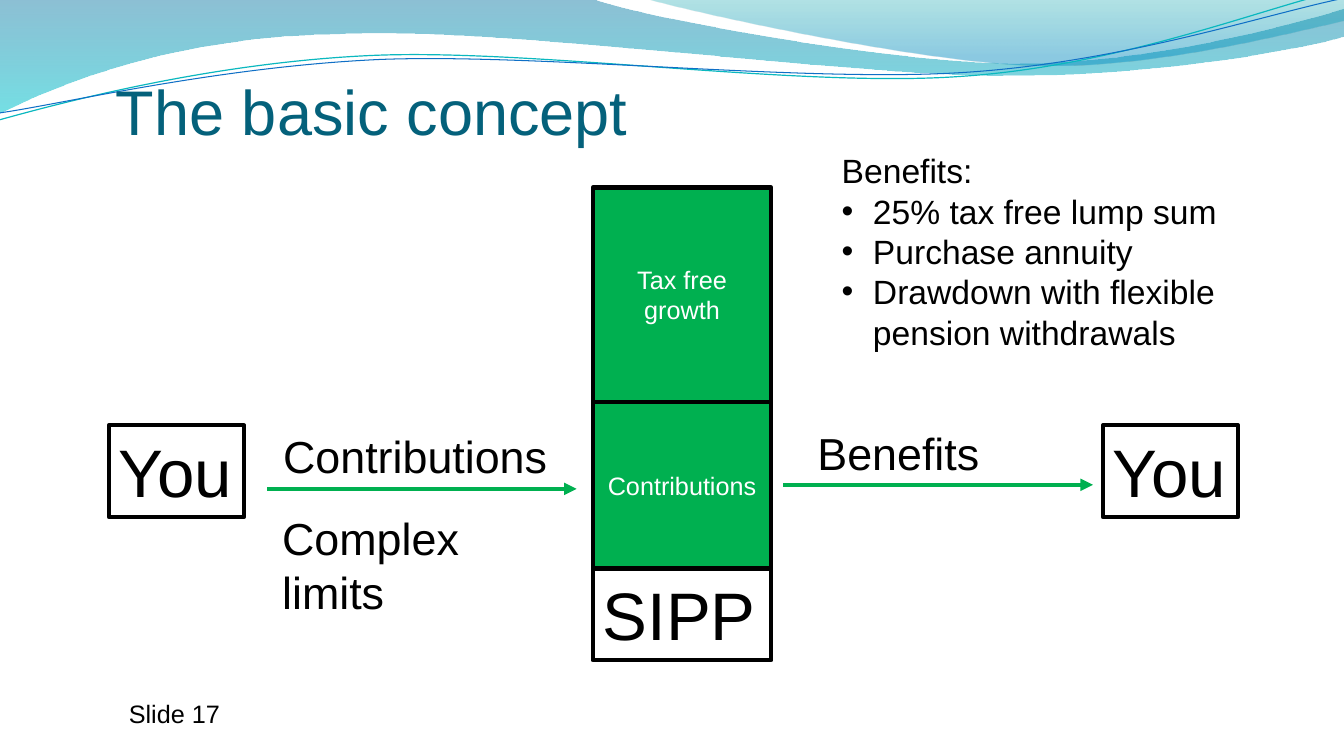
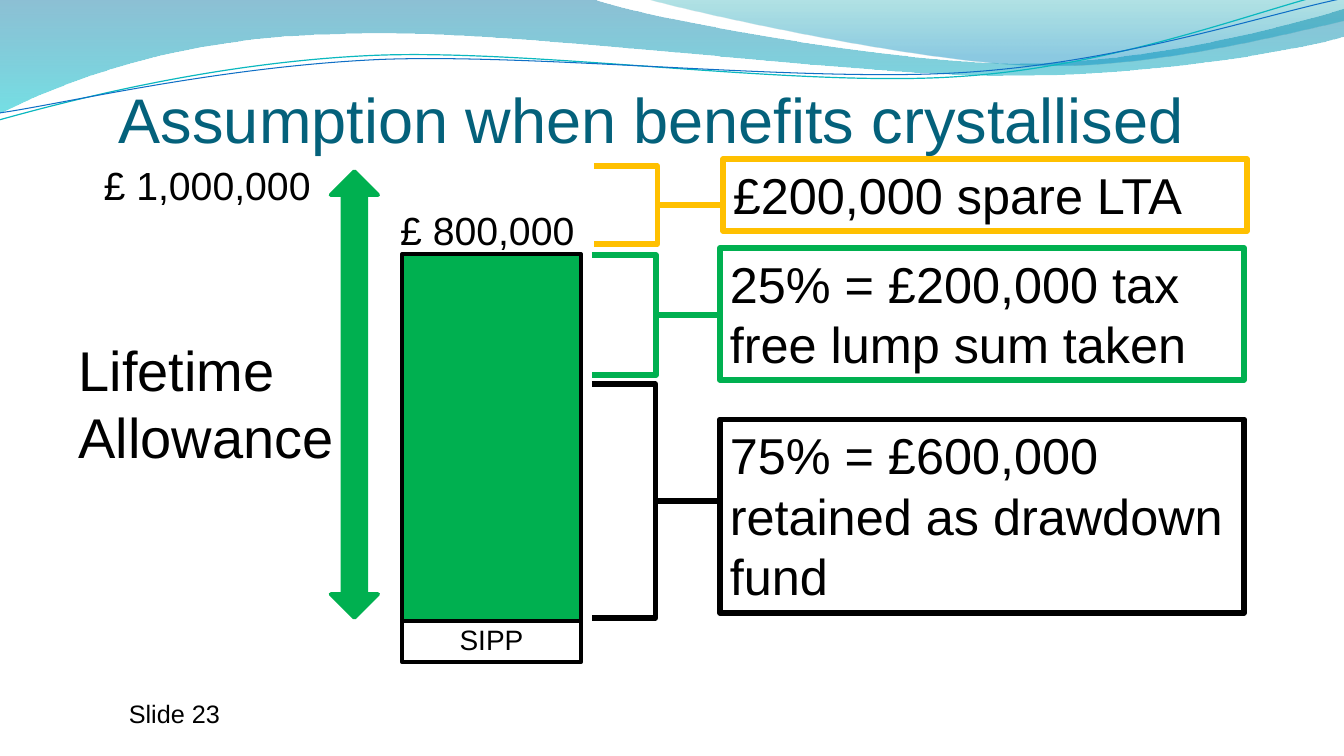
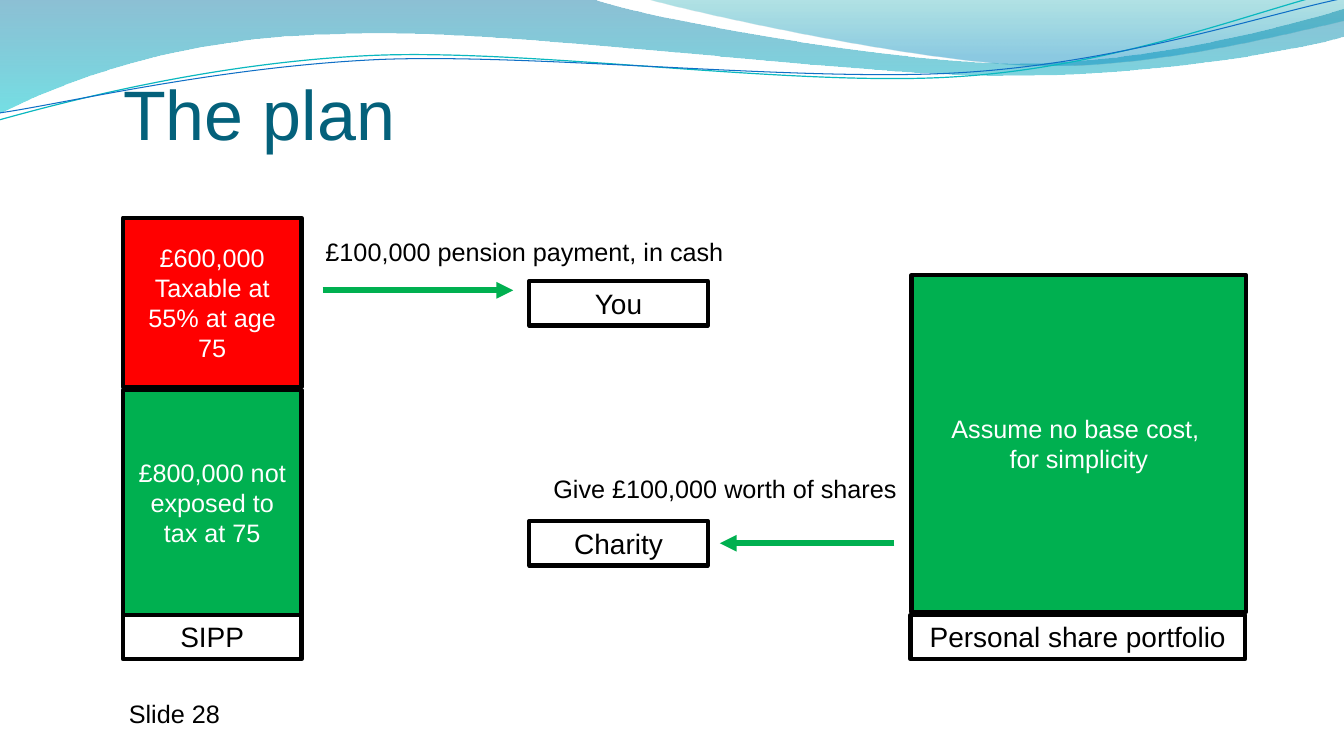
from lxml.etree import SubElement
from pptx import Presentation
from pptx.dml.color import RGBColor
from pptx.enum.shapes import MSO_CONNECTOR, MSO_SHAPE
from pptx.enum.text import MSO_ANCHOR, MSO_AUTO_SIZE, PP_ALIGN
from pptx.oxml.ns import qn
from pptx.util import Inches, Pt

FONT = "Arial"
BLACK, WHITE = "000000", "FFFFFF"
GREEN, RED, AMBER = "00B050", "FF0000", "FFC000"
TITLE_BLUE = "04617B"
BAR_WIDTH = 1.77
LABEL_HEIGHT = 0.44

BROAD_WAVE = [
    (0, 0), (5.87, -0.01), (6.34, 0.17, 8.85, 0.63, 10.11, 0.63),
    (11.38, 0.63, 12.78, 0.26, 13.33, 0.09), (13.35, 0.36),
    (13.11, 0.44, 11.6, 0.76, 9.94, 0.75), (8.29, 0.75, 5.09, 0.28, 3.43, 0.34),
    (1.72, 0.36, 0.61, 0.83, -0.01, 1.13), (0, 0),
]
RIGHT_WAVE = [
    (6.39, -0.01), (6.79, 0.11, 9.09, 0.62, 10.25, 0.65),
    (11.41, 0.69, 12.82, 0.32, 13.33, 0.21), (13.33, 0), (6.39, -0.01),
]
TEAL_STRAND = [
    (-0.01, 1.19), (0.64, 1.01, 2.11, 0.62, 3.69, 0.55),
    (5.27, 0.48, 7.9, 0.87, 9.5, 0.76), (11.1, 0.66, 12.52, 0.08, 13.31, -0.1),
]
BLUE_STRAND = [
    (0, 1.12), (0.63, 1.03, 2.18, 0.66, 3.78, 0.59),
    (5.37, 0.53, 7.96, 0.82, 9.55, 0.72), (11.15, 0.62, 12.55, 0.14, 13.34, -0.02),
]


def rgb(code):
    """Turn a hex string into a colour."""
    return RGBColor.from_string(code)


def inches(*lengths):
    """Convert several lengths to Inches."""
    return [Inches(length) for length in lengths]


def bend(outline, segments):
    """Turn each three-point run of an outline into a cubic curve."""
    steps = outline.element.iter(qn("a:lnTo"))
    steps = iter(list(steps))
    for segment in segments:
        first = next(steps)
        if len(segment) == 6:
            first.tag = qn("a:cubicBezTo")
            for _ in range(2):
                control = next(steps)
                first.append(control[0])
                control.getparent().remove(control)


def draw_outline(slide, segments, close):
    """Draw an outline of lines and cubic curves and return it."""
    points = [tuple(inches(*segment[at:at + 2]))
              for segment in segments for at in range(0, len(segment), 2)]
    builder = slide.shapes.build_freeform(*points[0])
    builder.add_line_segments(points[1:], close=close)
    outline = builder.convert_to_shape()
    bend(outline, segments[1:])
    outline.shadow.inherit = False
    return outline


def add_wave(slide, segments, stops):
    """Draw a wave with a translucent downward gradient."""
    wave = draw_outline(slide, segments, True)
    wave.line.fill.background()
    wave.fill.gradient()
    wave.fill.gradient_angle = 270
    for stop, (position, color, _) in zip(wave.fill.gradient_stops, stops):
        stop.position = position
        stop.color.rgb = rgb(color)
    for node, (_, _, opacity) in zip(wave.element.iter(qn("a:srgbClr")), stops):
        SubElement(node, qn("a:alpha"), val=str(opacity * 1000))
    return wave


def add_strand(slide, segments, color, width):
    """Draw a thin curved line."""
    strand = draw_outline(slide, segments, False)
    strand.fill.background()
    strand.line.color.rgb = rgb(color)
    strand.line.width = Pt(width)
    return strand


def decorate_layout(slide):
    """Build the waves once and place them on the shared layout."""
    waves = [
        add_wave(slide, BROAD_WAVE, [(0, "0074A1", 45), (1, "00C6CF", 55)]),
        add_wave(slide, RIGHT_WAVE, [(0, "00A1A9", 30), (0.8, "008BBF", 45)]),
        add_strand(slide, TEAL_STRAND, "0AB8BF", 0.85),
        add_strand(slide, BLUE_STRAND, "0F6FC6", 0.75),
    ]
    for wave in waves:
        slide.slide_layout.shapes.element.append(wave.element)


def write(frame, lines, size, color=BLACK, align=PP_ALIGN.LEFT, anchor=MSO_ANCHOR.TOP):
    """Fill a text frame with one paragraph per line."""
    frame.word_wrap = True
    frame.vertical_anchor = anchor
    for index, line in enumerate(lines):
        paragraph = frame.add_paragraph() if index else frame.paragraphs[0]
        paragraph.alignment = align
        run = paragraph.add_run()
        run.text = line
        run.font.name = FONT
        run.font.size = Pt(size)
        run.font.color.rgb = rgb(color)


def add_text(slide, box, lines, size):
    """Add plain black text."""
    frame = slide.shapes.add_textbox(*inches(*box)).text_frame
    write(frame, lines, size)
    return frame


def add_bullets(frame):
    """Bullet every paragraph after the heading."""
    indent = Inches(0.31)
    for paragraph in frame.paragraphs[1:]:
        properties = paragraph._p.get_or_add_pPr()
        properties.set("marL", str(indent))
        properties.set("indent", str(-indent))
        SubElement(properties, qn("a:buFont"), typeface=FONT)
        SubElement(properties, qn("a:buChar"), char="•")


def add_figure(slide, kind, box, line, width, fill=None):
    """Add a preset shape with an outline and an optional fill."""
    figure = slide.shapes.add_shape(kind, *inches(*box))
    figure.shadow.inherit = False
    figure.line.color.rgb = rgb(line)
    figure.line.width = Pt(width)
    if fill:
        figure.fill.solid()
        figure.fill.fore_color.rgb = rgb(fill)
    else:
        figure.fill.background()
    return figure


def add_label(slide, box, text, size=20, align=PP_ALIGN.CENTER, line=BLACK, width=3):
    """Add an outlined box that fits its text."""
    frame = add_figure(slide, MSO_SHAPE.RECTANGLE, box, line, width).text_frame
    write(frame, [text], size, align=align)
    frame.auto_size = MSO_AUTO_SIZE.SHAPE_TO_FIT_TEXT


def add_fund(slide, box, lines=(), fill=GREEN):
    """Add a filled block of money with white text."""
    fund = add_figure(slide, MSO_SHAPE.RECTANGLE, box, BLACK, 3, fill)
    write(fund.text_frame, lines, 18, WHITE, PP_ALIGN.CENTER, MSO_ANCHOR.MIDDLE)


def add_share(slide, brace_box, label_box, text, color):
    """Add a square brace and the label it points to."""
    brace = add_figure(slide, MSO_SHAPE.RIGHT_BRACE, brace_box, color, 4)
    brace.adjustments[0] = 0
    brace.adjustments[1] = 0.5
    add_label(slide, label_box, text, 36, PP_ALIGN.LEFT, color, 4)


def add_flow(slide, start, end, y, width):
    """Add a level green arrow."""
    flow = slide.shapes.add_connector(MSO_CONNECTOR.STRAIGHT, *inches(start, y, end, y))
    flow.line.color.rgb = rgb(GREEN)
    flow.line.width = Pt(width)
    properties = flow.element.spPr
    SubElement(properties.find(qn("a:ln")), qn("a:tailEnd"), type="triangle")
    SubElement(properties, qn("a:effectLst"))


def add_page(deck, heading, box, number, size=45):
    """Add a slide with its title and slide number."""
    slide = deck.slides.add_slide(deck.slide_layouts[5])
    title = slide.shapes.title
    title.left, title.top, title.width, title.height = inches(*box)
    frame = title.text_frame
    frame.auto_size = MSO_AUTO_SIZE.NONE
    frame.margin_left, frame.margin_top, frame.margin_right, frame.margin_bottom = inches(
        0, 0.05, 0, 0)
    write(frame, [heading], size, TITLE_BLUE, anchor=MSO_ANCHOR.BOTTOM)
    add_text(slide, (1.18, 6.88, 2.33, 0.4), [f"Slide {number}"], 18)
    return slide


def build_concept(deck):
    """Show money going into and out of the pension."""
    slide = add_page(deck, "The basic concept", (1.15, 0.68, 12.11, 0.79), 17)
    decorate_layout(slide)
    for left, width, top, name in [
            (1.08, 1.34, 4.22, "You"), (10.94, 1.34, 4.22, "You"),
            (5.88, BAR_WIDTH, 5.64, "SIPP")]:
        add_label(slide, (left, top, width, 0.91), name, 48, PP_ALIGN.LEFT)
    add_fund(slide, (5.88, 3.99, BAR_WIDTH, 1.65), ["Contributions"])
    add_fund(slide, (5.88, 1.86, BAR_WIDTH, 2.13), ["Tax free growth"])
    add_flow(slide, 2.65, 5.72, 4.85, 3)
    add_flow(slide, 7.77, 10.84, 4.81, 3)
    add_text(slide, (2.71, 4.2, 2.94, 0.64), ["Contributions"], 32)
    add_text(slide, (2.7, 5.02, 2.44, 0.4), ["Complex limits"], 32)
    add_text(slide, (8.01, 4.17, 2.94, 0.64), ["Benefits"], 32)
    add_bullets(add_text(slide, (8.25, 1.44, 4.41, 2.12), [
        "Benefits:", "25% tax free lump sum", "Purchase annuity",
        "Drawdown with flexible pension withdrawals"], 24))


def build_assumption(deck):
    """Split the fund against the lifetime allowance."""
    slide = add_page(deck, "Assumption when benefits crystallised",
                     (1.18, 0.76, 12.11, 0.79), 23)
    add_label(slide, (3.99, 6.13, BAR_WIDTH, LABEL_HEIGHT), "SIPP")
    add_fund(slide, (3.99, 2.52, BAR_WIDTH, 3.64))
    add_figure(slide, MSO_SHAPE.UP_DOWN_ARROW, (3.28, 1.7, 0.47, 4.43), GREEN, 2.75, GREEN)
    add_text(slide, (0.68, 3.28, 2.91, 1.45), ["Lifetime", "Allowance"], 40)
    add_text(slide, (0.93, 1.55, 2.32, 0.57), ["£ 1,000,000"], 28)
    add_text(slide, (3.87, 2, 2.02, 0.57), ["£ 800,000"], 28)
    add_share(slide, (5.87, 3.81, 1.26, 2.32), (7.14, 4.16, 5.2, 1.92),
              "75% = £600,000 retained as drawdown fund", BLACK)
    add_share(slide, (5.87, 2.53, 1.27, 1.19), (7.14, 2.46, 5.2, 1.31),
              "25% = £200,000 tax free lump sum taken", GREEN)
    add_share(slide, (5.89, 1.65, 1.26, 0.77), (7.17, 1.58, 5.2, 0.71),
              "£200,000 spare LTA", AMBER)


def build_plan(deck):
    """Show the pension payment and the gift of shares."""
    slide = add_page(deck, "The plan", (1.22, 0.28, 12.11, 1.25), 28, 50)
    for left, top, width, name in [
            (1.22, 6.1, BAR_WIDTH, "SIPP"), (9.03, 6.1, 3.32, "Personal share portfolio"),
            (5.25, 2.79, BAR_WIDTH, "You"), (5.25, 5.17, BAR_WIDTH, "Charity")]:
        add_label(slide, (left, top, width, LABEL_HEIGHT), name)
    add_fund(slide, (1.22, 3.87, BAR_WIDTH, 2.23), ["£800,000 not exposed to tax at 75"])
    add_fund(slide, (1.22, 2.16, BAR_WIDTH, 1.68),
             ["£600,000", "Taxable at 55% at age 75"], RED)
    add_fund(slide, (9.04, 2.73, 3.32, 3.34), ["Assume no base cost, ", "for simplicity"])
    add_flow(slide, 3.2, 5.09, 2.88, 4)
    add_flow(slide, 8.87, 7.14, 5.39, 4)
    add_text(slide, (3.13, 2.3, 4.17, 0.4), ["£100,000 pension payment, in cash"], 18)
    add_text(slide, (5.39, 4.65, 3.63, 0.4), ["Give £100,000 worth of shares"], 18)


def main():
    """Build and save the deck."""
    deck = Presentation()
    deck.slide_width, deck.slide_height = inches(13.33, 7.5)
    build_concept(deck)
    build_assumption(deck)
    build_plan(deck)
    deck.save("out.pptx")


if __name__ == "__main__":
    main()
